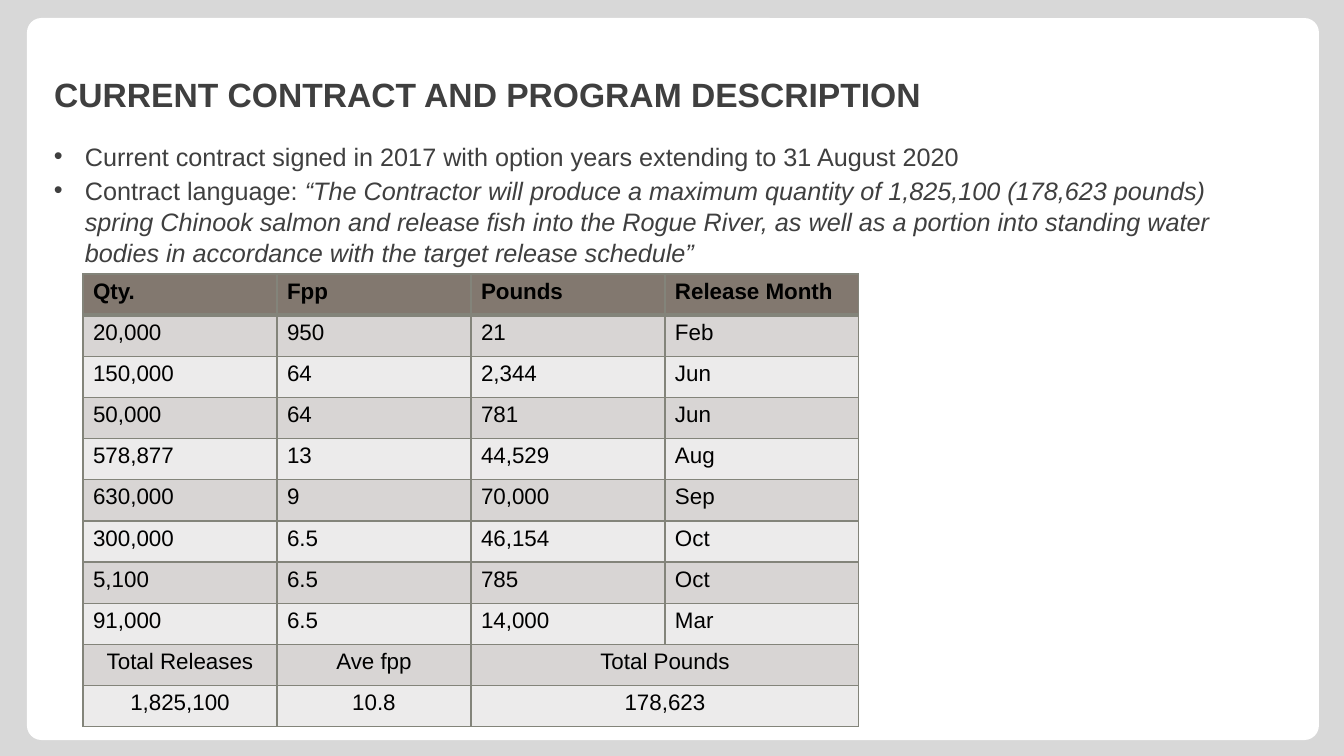
from lxml import etree
from pptx import Presentation
from pptx.dml.color import RGBColor
from pptx.enum.shapes import MSO_SHAPE
from pptx.enum.text import MSO_ANCHOR, MSO_AUTO_SIZE, PP_ALIGN
from pptx.oxml.ns import qn
from pptx.util import Emu, Pt

ROUNDED = MSO_SHAPE.ROUNDED_RECTANGLE
BOTTOM, NO_FIT = MSO_ANCHOR.BOTTOM, MSO_AUTO_SIZE.NONE
LEFT, CENTER = PP_ALIGN.LEFT, PP_ALIGN.CENTER
TITLE_ONLY = 5
EMU_PER_PX = 914400 / 100.8
FONT = "Arial"
COLORS = {
    "backdrop": "D8D8D8", "panel": "FFFFFF", "text": "3F3F3F",
    "table text": "000000", "header": "82786F", "border": "83847A",
    "dark band": "D8D5D4", "light band": "ECEBEB",
}

TITLE = "CURRENT CONTRACT AND PROGRAM DESCRIPTION"
# Each bullet is a plain part and an italic part
BULLETS = [
    ("Current contract signed in 2017 with option years extending to 31 August 2020", ""),
    ("Contract language: ",
     "“The Contractor will produce a maximum quantity of 1,825,100 (178,623 pounds) "
     "spring Chinook salmon and release fish into the Rogue River, as well as a portion "
     "into standing water bodies in accordance with the target release schedule”"),
]
RELEASES = [
    ("Qty.", "Fpp", "Pounds", "Release Month"),
    ("20,000", "950", "21", "Feb"),
    ("150,000", "64", "2,344", "Jun"),
    ("50,000", "64", "781", "Jun"),
    ("578,877", "13", "44,529", "Aug"),
    ("630,000", "9", "70,000", "Sep"),
    ("300,000", "6.5", "46,154", "Oct"),
    ("5,100", "6.5", "785", "Oct"),
    ("91,000", "6.5", "14,000", "Mar"),
]
TOTALS = [
    ("Total Releases", "Ave fpp", "Total Pounds"),
    ("1,825,100", "10.8", "178,623"),
]


def px(length):
    return Emu(round(length * EMU_PER_PX))


def rgb(name):
    return RGBColor.from_string(COLORS[name])


def set_font(paragraph, size, color, bold=False):
    font = paragraph.font
    font.name, font.size, font.bold = FONT, Pt(size), bold
    font.color.rgb = rgb(color)


def add_bullet(paragraph, indent):
    properties = paragraph._p.get_or_add_pPr()
    properties.set("marL", str(px(indent)))
    properties.set("indent", str(-px(indent)))
    bullet_color = etree.SubElement(properties, qn("a:buClr"))
    etree.SubElement(bullet_color, qn("a:srgbClr"), val=COLORS["text"])
    etree.SubElement(properties, qn("a:buFont"), typeface=FONT)
    etree.SubElement(properties, qn("a:buChar"), char="•")


def set_borders(cell, top, bottom):
    properties = cell._tc.get_or_add_tcPr()
    for side, width in (("L", 1), ("R", 1), ("T", top), ("B", bottom)):
        line = etree.SubElement(properties, qn(f"a:ln{side}"), w=str(Pt(width)))
        fill = etree.SubElement(line, qn("a:solidFill"))
        etree.SubElement(fill, qn("a:srgbClr"), val=COLORS["border"])


def add_panel(slide, left, top, width, height):
    panel = slide.shapes.add_shape(ROUNDED, px(left), px(top), px(width), px(height))
    panel.adjustments[0] = 0.02
    panel.shadow.inherit = False
    panel.fill.solid()
    panel.fill.fore_color.rgb = rgb("panel")
    panel.line.fill.background()
    # Behind the title
    slide.shapes._spTree.insert(2, panel._element)


def place_title(slide, left, top, width, height):
    title = slide.shapes.title
    title.left, title.top = px(left), px(top)
    title.width, title.height = px(width), px(height)
    frame = title.text_frame
    frame.text = TITLE
    frame.auto_size = NO_FIT
    frame.vertical_anchor = BOTTOM
    heading = frame.paragraphs[0]
    heading.alignment = LEFT
    set_font(heading, 24, "text", bold=True)


def add_contract_terms(slide, left, top, width, height):
    frame = slide.shapes.add_textbox(px(left), px(top), px(width), px(height)).text_frame
    frame.word_wrap = True
    for index, (plain, quote) in enumerate(BULLETS):
        term = frame.add_paragraph() if index else frame.paragraphs[0]
        add_bullet(term, 31)
        term.line_spacing = 1.04
        term.space_before = Pt(1.7 if index else 0)
        set_font(term, 18, "text")
        term.add_run().text = plain
        if quote:
            quotation = term.add_run()
            quotation.text = quote
            quotation.font.italic = True


def add_release_schedule(slide, left, top, width, height):
    rows = RELEASES + TOTALS
    columns = len(RELEASES[0])
    schedule = slide.shapes.add_table(
        len(rows), columns, px(left), px(top), px(width), px(height)).table
    for column in schedule.columns:
        column.width = px(width / columns)
    for r, values in enumerate(rows):
        schedule.rows[r].height = px(height / len(rows))
        is_header, is_total = r == 0, r >= len(RELEASES)
        band = "header" if is_header else "dark band" if r % 2 else "light band"
        for c in range(columns):
            cell = schedule.cell(r, c)
            set_borders(cell, top=3 if r == 1 else 1, bottom=3 if is_header else 1)
            cell.fill.solid()
            cell.fill.fore_color.rgb = rgb(band)
            if c < len(values):
                cell.text = values[c]
                entry = cell.text_frame.paragraphs[0]
                entry.alignment = CENTER if is_total else LEFT
                set_font(entry, 16, "table text", bold=is_header)
        # Total pounds spans the last two columns
        if is_total:
            schedule.cell(r, columns - 2).merge(schedule.cell(r, columns - 1))


def build_contract_slide(deck):
    slide = deck.slides.add_slide(deck.slide_layouts[TITLE_ONLY])
    slide.background.fill.solid()
    slide.background.fill.fore_color.rgb = rgb("backdrop")
    add_panel(slide, 27, 18, 1292, 722)
    place_title(slide, 44, 30, 1232, 89)
    add_contract_terms(slide, 44, 135, 1232, 135)
    add_release_schedule(slide, 83, 274, 776, 453)


def main():
    deck = Presentation()
    deck.slide_width, deck.slide_height = px(1344), px(756)
    build_contract_slide(deck)
    deck.save("out.pptx")


if __name__ == "__main__":
    main()
